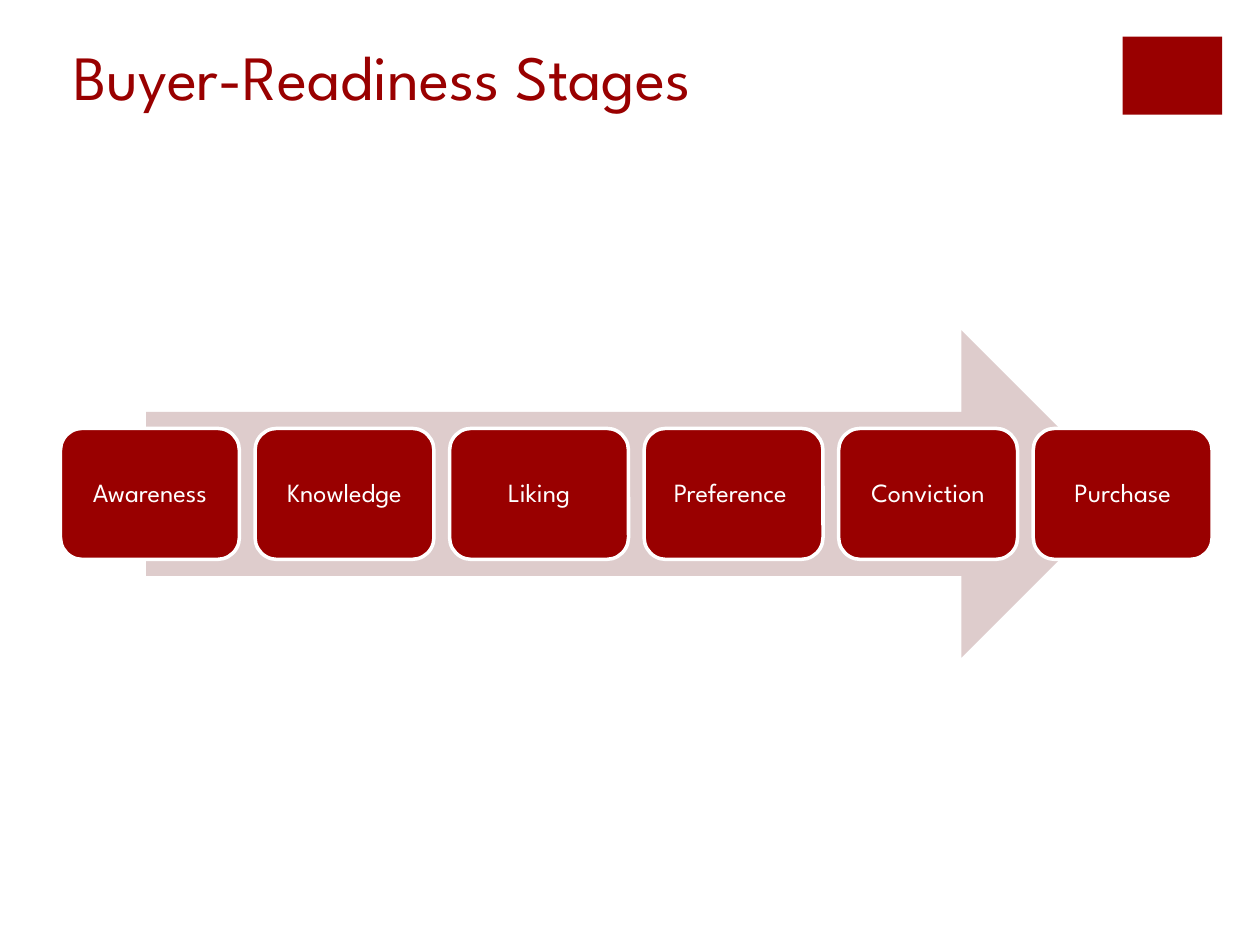
from pptx import Presentation
from pptx.dml.color import RGBColor
from pptx.enum.shapes import MSO_SHAPE
from pptx.enum.text import MSO_ANCHOR, PP_ALIGN
from pptx.util import Inches, Pt

COLORS = {"crimson": "990000", "blush": "DECCCC", "white": "FFFFFF"}
STAGES = ["Awareness", "Knowledge", "Liking", "Preference ", "Conviction", "Purchase"]


def write(frame, text, size, color, font="League Spartan", align=PP_ALIGN.LEFT,
          anchor=MSO_ANCHOR.TOP, inset=None, line_spacing=None):
    frame.word_wrap = True
    frame.vertical_anchor = anchor
    if inset is not None:
        frame.margin_left = frame.margin_right = Inches(inset)
        frame.margin_top = frame.margin_bottom = Inches(inset)
    paragraph = frame.paragraphs[0]
    paragraph.alignment = align
    if line_spacing is not None:
        paragraph.line_spacing = line_spacing
    run = paragraph.add_run()
    run.text = text
    run.font.name = font
    run.font.size = Pt(size)
    run.font.color.rgb = RGBColor.from_string(COLORS[color])


class StageSlide:
    """Holds the slide being built and the style of its elements."""

    def __init__(self, presentation):
        self.slide = presentation.slides.add_slide(presentation.slide_layouts[5])

    def title(self, text, left, top, width, height):
        heading = self.slide.shapes.title
        heading.left, heading.top = Inches(left), Inches(top)
        heading.width, heading.height = Inches(width), Inches(height)
        write(heading.text_frame, text, size=36, color="crimson")

    def block(self, preset, left, top, width, height, fill, outline=None):
        block = self.slide.shapes.add_shape(
            preset, Inches(left), Inches(top), Inches(width), Inches(height))
        block.shadow.inherit = False
        block.fill.solid()
        block.fill.fore_color.rgb = RGBColor.from_string(COLORS[fill])
        if outline:
            block.line.color.rgb = RGBColor.from_string(COLORS[outline])
            block.line.width = Pt(2)
        else:
            block.line.fill.background()
        return block

    def stage(self, text, left, top, width, height):
        card = self.block(MSO_SHAPE.ROUNDED_RECTANGLE, left, top, width, height,
                          "crimson", outline="white")
        write(card.text_frame, text, size=15, color="white", align=PP_ALIGN.CENTER,
              anchor=MSO_ANCHOR.MIDDLE, inset=0.06, line_spacing=0.9)


def main():
    presentation = Presentation()
    presentation.slide_width, presentation.slide_height = Inches(10), Inches(7.5)
    page = StageSlide(presentation)
    page.block(MSO_SHAPE.RECTANGLE, 8.91, 0.29, 0.79, 0.62, "crimson")
    page.title("Buyer-Readiness Stages", 0.48, 0.25, 7.83, 1.37)
    page.block(MSO_SHAPE.RIGHT_ARROW, 1.16, 2.62, 7.77, 2.6, "blush")

    first_left, last_left = 0.48, 8.2
    pitch = (last_left - first_left) / (len(STAGES) - 1)
    for index, stage in enumerate(STAGES):
        page.stage(stage, first_left + index * pitch, 3.4, 1.42, 1.04)

    presentation.save("out.pptx")


if __name__ == "__main__":
    main()
